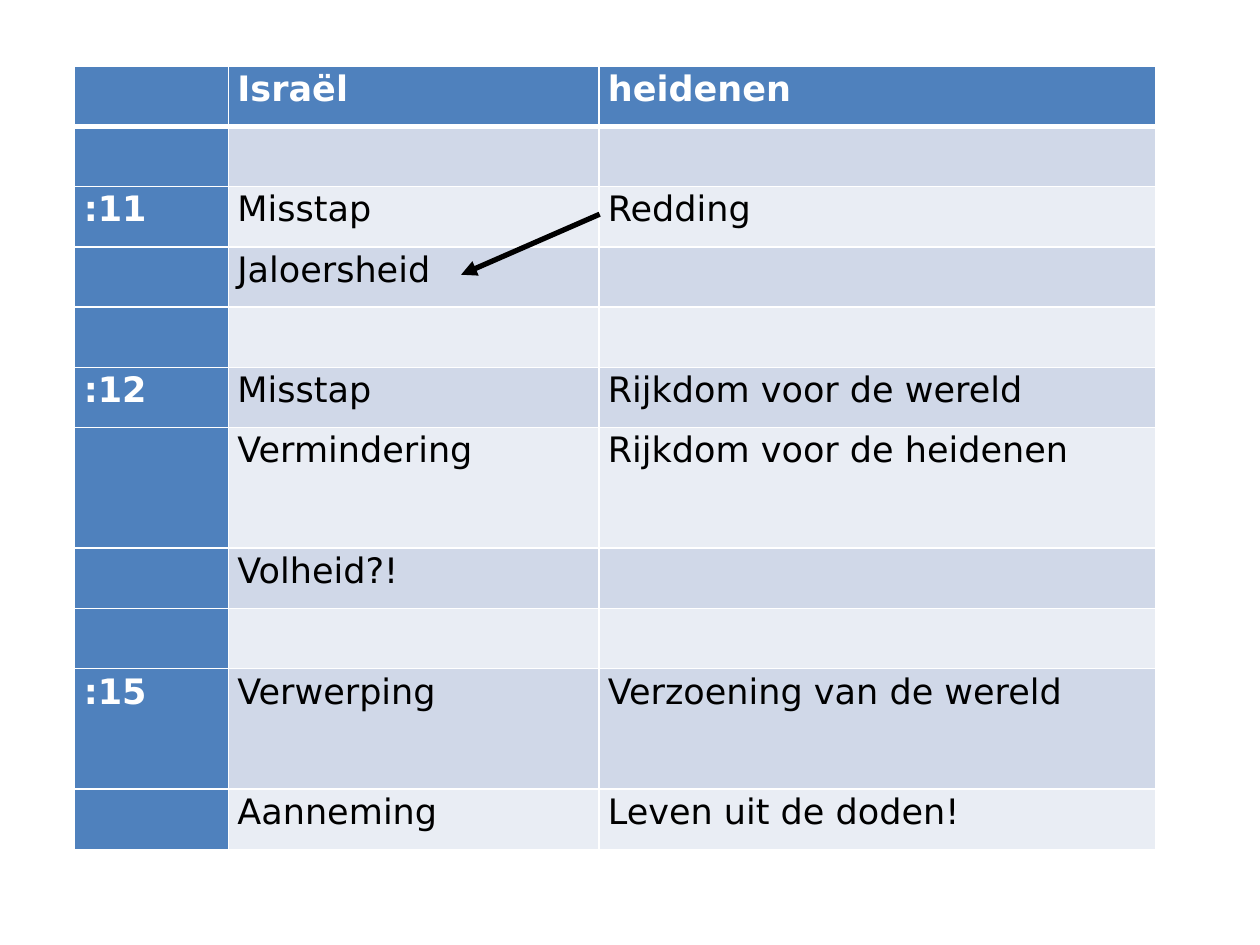
from lxml import etree
from pptx import Presentation
from pptx.dml.color import RGBColor
from pptx.enum.shapes import MSO_CONNECTOR
from pptx.oxml import parse_xml
from pptx.oxml.ns import nsdecls, qn
from pptx.util import Pt

BLUE, WHITE, BLACK = "4F81BD", "FFFFFF", "000000"
BANDS = ["E9EDF4", "D0D8E8"]


def color(hex_text):
    return RGBColor.from_string(hex_text)


def add_border(cell, side, width):
    cell._tc.get_or_add_tcPr().append(parse_xml(
        f'<a:ln{side} {nsdecls("a")} w="{Pt(width)}"><a:solidFill>'
        f'<a:srgbClr val="{WHITE}"/></a:solidFill></a:ln{side}>'))


deck = Presentation()
deck.slide_width, deck.slide_height = Pt(720), Pt(540)
page = deck.slides.add_slide(deck.slide_layouts[6])

rows = [
    ("", "Israël", "heidenen"),
    ("", "", ""),
    (":11", "Misstap", "Redding"),
    ("", "Jaloersheid", ""),
    ("", "", ""),
    (":12", "Misstap", "Rijkdom voor de wereld"),
    ("", "Vermindering", "Rijkdom voor de heidenen"),
    ("", "Volheid?!", ""),
    ("", "", ""),
    (":15", "Verwerping", "Verzoening van de wereld"),
    ("", "Aanneming", "Leven uit de doden!"),
]
column_widths = [87.8, 211.7, 318.2]
row_height = 34.45
tall_rows = [6, 9]

table = page.shapes.add_table(
    len(rows), len(column_widths), Pt(42.7), Pt(37.7),
    Pt(sum(column_widths)), Pt(row_height * (len(rows) + len(tall_rows)))).table
for column, width in zip(table.columns, column_widths):
    column.width = Pt(width)

for r, texts in enumerate(rows):
    table.rows[r].height = Pt(row_height * (2 if r in tall_rows else 1))
    for c, text in enumerate(texts):
        cell = table.cell(r, c)
        is_heading = r == 0 or c == 0
        cell.margin_left = cell.margin_right = Pt(5.2)
        cell.margin_top = cell.margin_bottom = 0
        for side in "LRTB":
            thick = (r == 0 and side == "B") or (r == 1 and side == "T")
            add_border(cell, side, 3 if thick else 1)
        cell.fill.solid()
        cell.fill.fore_color.rgb = color(BLUE if is_heading else BANDS[r % 2])

        cell.text = text
        para = cell.text_frame.paragraphs[0]
        para.line_spacing = 1.07
        para.font.name = "DejaVu Sans"
        para.font.size = Pt(20)
        para.font.bold = is_heading
        para.font.color.rgb = color(WHITE if is_heading else BLACK)

arrow = page.shapes.add_connector(
    MSO_CONNECTOR.STRAIGHT, Pt(342.7), Pt(122.4), Pt(263.5), Pt(157))
arrow.line.width = Pt(3)
arrow.line.color.rgb = color(BLACK)
etree.SubElement(arrow.line._get_or_add_ln(), qn("a:tailEnd"), type="triangle")
etree.SubElement(arrow._element.spPr, qn("a:effectLst"))

deck.save("out.pptx")
